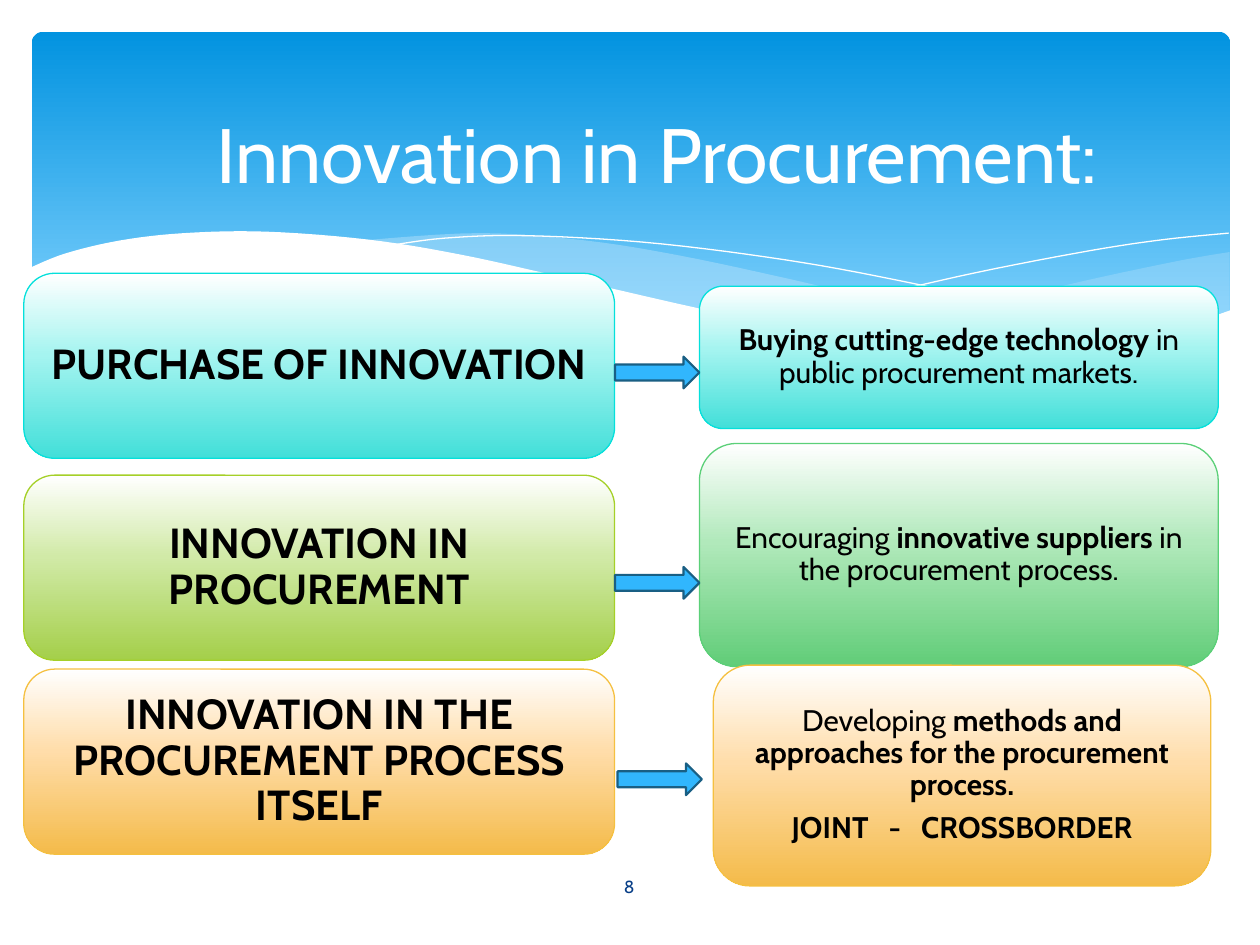
"""Build the slide that pairs three kinds of procurement innovation with their aims."""
from copy import deepcopy

from lxml import etree
from pptx import Presentation
from pptx.dml.color import RGBColor
from pptx.enum.shapes import MSO_SHAPE
from pptx.enum.text import MSO_ANCHOR, PP_ALIGN
from pptx.oxml.ns import qn
from pptx.util import Cm, Pt

ROUNDED, ARROW = MSO_SHAPE.ROUNDED_RECTANGLE, MSO_SHAPE.RIGHT_ARROW
CENTER, MIDDLE = PP_ALIGN.CENTER, MSO_ANCHOR.MIDDLE
FONT = "Cabin"
WHITE, BLACK, NAVY = "FFFFFF", "000000", "073E87"

TITLE = "Innovation in Procurement:"
PAGE_NUMBER = "8"

TURQUOISE = ([(0, WHITE), (0.44, "A5F4F0"), (1, "42DFD9")], "05E0DB")
GREEN = ([(0, WHITE), (0.44, "B1E9BB"), (1, "61CD78")], "5BD078")
LIME = ([(0, WHITE), (0.44, "D1EAA7"), (1, "A4CF4A")], "A5D028")
ORANGE = ([(0, WHITE), (0.44, "FFDDAA"), (1, "F4BB4A")], "F5C040")
BANNER_STOPS = [(0, "0293E0"), (0.9, "83D3FE")]

KINDS = [
    (5.51, TURQUOISE, ["*PURCHASE OF INNOVATION*"]),
    (9.58, LIME, ["*INNOVATION IN PROCUREMENT*"]),
    (13.49, ORANGE, ["*INNOVATION IN THE PROCUREMENT PROCESS ITSELF*"]),
]
AIMS = [
    ((14.1, 5.77, 10.46, 2.87), TURQUOISE,
     ["*Buying cutting-edge technology *in public procurement markets."]),
    ((14.1, 8.94, 10.46, 4.5), GREEN,
     ["Encouraging *innovative suppliers *in the procurement process."]),
    ((14.38, 13.41, 10.03, 4.45), ORANGE,
     ["Developing *methods and approaches for the procurement process.*",
      "*JOINT   -   CROSSBORDER*"]),
]
ARROWS = [(12.4, 7.19), (12.4, 11.43), (12.45, 15.39)]

RIGHT_WAVE = [
    [(24.79, 5.08), (23.75, 5.26), (21.87, 5.66), (19.13, 6.3), (16.79, 6.73)],
    [(16.79, 6.73), (17.91, 6.88), (19.23, 7.01), (20.68, 7.06), (22.15, 6.96),
     (23.39, 6.73), (24.79, 6.27)],
]
MIDDLE_WAVE = [
    [(22.68, 6.93), (20.5, 6.6), (17.93, 6.1), (15.98, 5.64), (13.74, 5.16),
     (11.81, 4.85), (9.65, 4.7), (7.26, 4.85)],
    [(7.26, 4.85), (9.19, 5.16), (11.4, 5.64), (14.38, 6.3), (16.51, 6.71),
     (18.69, 6.99), (20.78, 7.06), (22.68, 6.93)],
]
FALLING_LINE = [[(7.85, 4.95), (8.97, 4.8), (10.57, 4.75), (12.95, 4.88),
                 (15.44, 5.18), (17.65, 5.56), (20.19, 6.12), (23.04, 6.91)]]
RISING_LINE = [[(15.57, 6.53), (17.65, 5.97), (19.71, 5.49), (22, 5.05),
                (23.47, 4.83), (24.77, 4.7)]]
WHITE_WAVE = [
    [(24.82, 6.25), (23.62, 6.65), (22.23, 6.93), (20.55, 7.04), (18.9, 6.96),
     (16.97, 6.73), (14.71, 6.35), (11.35, 5.59), (9.27, 5.13), (7.42, 4.83),
     (5.36, 4.67), (3.71, 4.7), (2.41, 4.85), (1.32, 5.11), (0.58, 5.41)],
    [(0.58, 8.36), (24.82, 8.36)],
]
WAVES = [
    (RIGHT_WAVE, {"fill": "C6E7FC", "opacity": 29}),
    (MIDDLE_WAVE, {"fill": "C6E7FC", "opacity": 40}),
    (FALLING_LINE, {"line": WHITE}),
    (RISING_LINE, {"line": WHITE}),
    (WHITE_WAVE, {"fill": WHITE}),
]


def rgb(value):
    return RGBColor.from_string(value)


def paint(shape, fill=None, stops=None, line=None, width=0, opacity=None):
    shape.shadow.inherit = False
    if stops:
        shape.fill.gradient()
        shape.fill.gradient_angle = 270
        stop_list = next(shape._element.spPr.iter(qn("a:gsLst")))
        for _ in stops[2:]:
            stop_list.append(deepcopy(stop_list[-1]))
        for stop, (position, color) in zip(shape.fill.gradient_stops, stops):
            stop.position = position
            stop.color.rgb = rgb(color)
    elif fill:
        shape.fill.solid()
        shape.fill.fore_color.rgb = rgb(fill)
        if opacity:
            color = next(shape._element.spPr.iter(qn("a:srgbClr")))
            etree.SubElement(color, qn("a:alpha"), val=str(opacity * 1000))
    else:
        shape.fill.background()
    if line:
        shape.line.color.rgb = rgb(line)
        shape.line.width = Pt(width)
    else:
        shape.line.fill.background()


def write(shape, paragraphs, size, color, inset=None, spacing=None, after=0):
    frame = shape.text_frame
    frame.word_wrap = True
    frame.vertical_anchor = MIDDLE
    if inset is not None:
        frame.margin_left = frame.margin_right = Cm(inset)
        frame.margin_top = frame.margin_bottom = Cm(inset)
    for index, text in enumerate(paragraphs):
        paragraph = frame.add_paragraph() if index else frame.paragraphs[0]
        paragraph.alignment = CENTER
        paragraph.line_spacing = spacing
        paragraph.space_after = Pt(after)
        for part, words in enumerate(text.split("*")):
            if words:
                run = paragraph.add_run()
                run.text = words
                run.font.name, run.font.size = FONT, Pt(size)
                run.font.bold = part % 2 == 1
                run.font.color.rgb = rgb(color)


def smooth(anchors, steps=6):
    """Return points on a Catmull-Rom curve through the anchors."""
    if len(anchors) < 3:
        return anchors
    padded = [anchors[0], *anchors, anchors[-1]]
    points = [anchors[0]]
    for quad in zip(padded, padded[1:], padded[2:], padded[3:]):
        for step in range(1, steps + 1):
            t = step / steps
            points.append(tuple(
                b + t * (c - a) / 2 + t * t * (a - 2.5 * b + 2 * c - d / 2)
                + t ** 3 * (3 * b - a - 3 * c + d) / 2
                for a, b, c, d in zip(*quad)))
    return points


def add_wave(shapes, curves, look):
    points = [(Cm(x), Cm(y)) for curve in curves for x, y in smooth(curve)]
    builder = shapes.build_freeform(*points[0])
    builder.add_line_segments(points[1:], close="fill" in look)
    paint(builder.convert_to_shape(), **look)


def add_block(shapes, kind, place, **look):
    block = shapes.add_shape(kind, *map(Cm, place))
    paint(block, **look)
    return block


def add_card(shapes, place, palette, paragraphs, size, inset):
    stops, line = palette
    card = add_block(shapes, ROUNDED, place, stops=stops, line=line, width=0.75)
    write(card, paragraphs, size, BLACK, inset=inset, spacing=0.9, after=round(size * 0.35))


def main():
    deck = Presentation()
    deck.slide_width, deck.slide_height = Cm(25.4), Cm(19.05)
    shapes = deck.slides.add_slide(deck.slide_layouts[6]).shapes

    banner = add_block(shapes, ROUNDED, (0.64, 0.64, 24.16, 6.86), stops=BANNER_STOPS)
    banner.adjustments[0] = 0.034
    for curves, look in WAVES:
        add_wave(shapes, curves, look)

    title = shapes.add_textbox(*map(Cm, (1.4, -0.25, 23.7, 6.65)))
    write(title, [TITLE], 44, WHITE)

    for place, palette, paragraphs in AIMS:
        add_card(shapes, place, palette, paragraphs, 17, 0.18)
    for top, palette, paragraphs in KINDS:
        add_card(shapes, (0.48, top, 11.91, 3.73), palette, paragraphs, 24, 0.25)
    for left, top in ARROWS:
        add_block(shapes, ARROW, (left, top, 1.7, 0.64), fill="31B6FD", line="195F84", width=1.25)

    page_number = shapes.add_textbox(*map(Cm, (11.07, 17.37, 3.23, 1.02)))
    write(page_number, [PAGE_NUMBER], 10, NAVY)
    deck.save("out.pptx")


if __name__ == "__main__":
    main()
